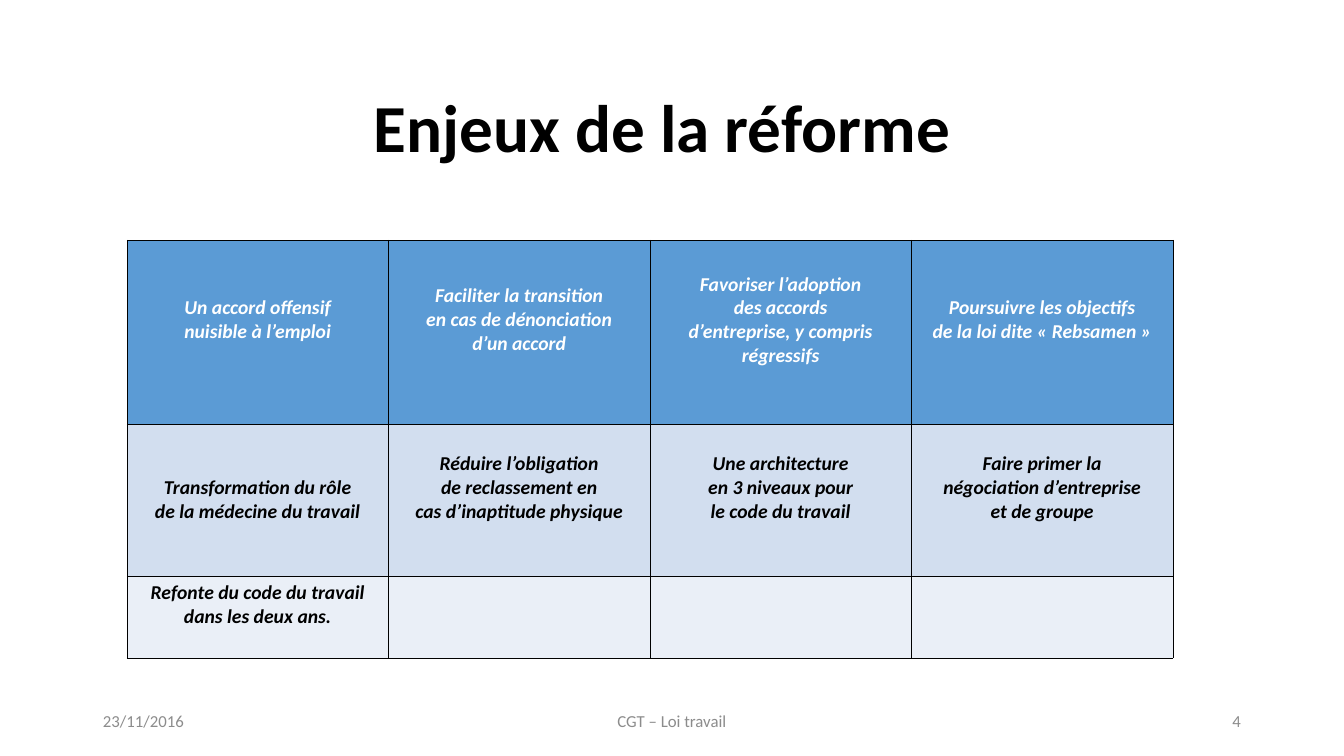
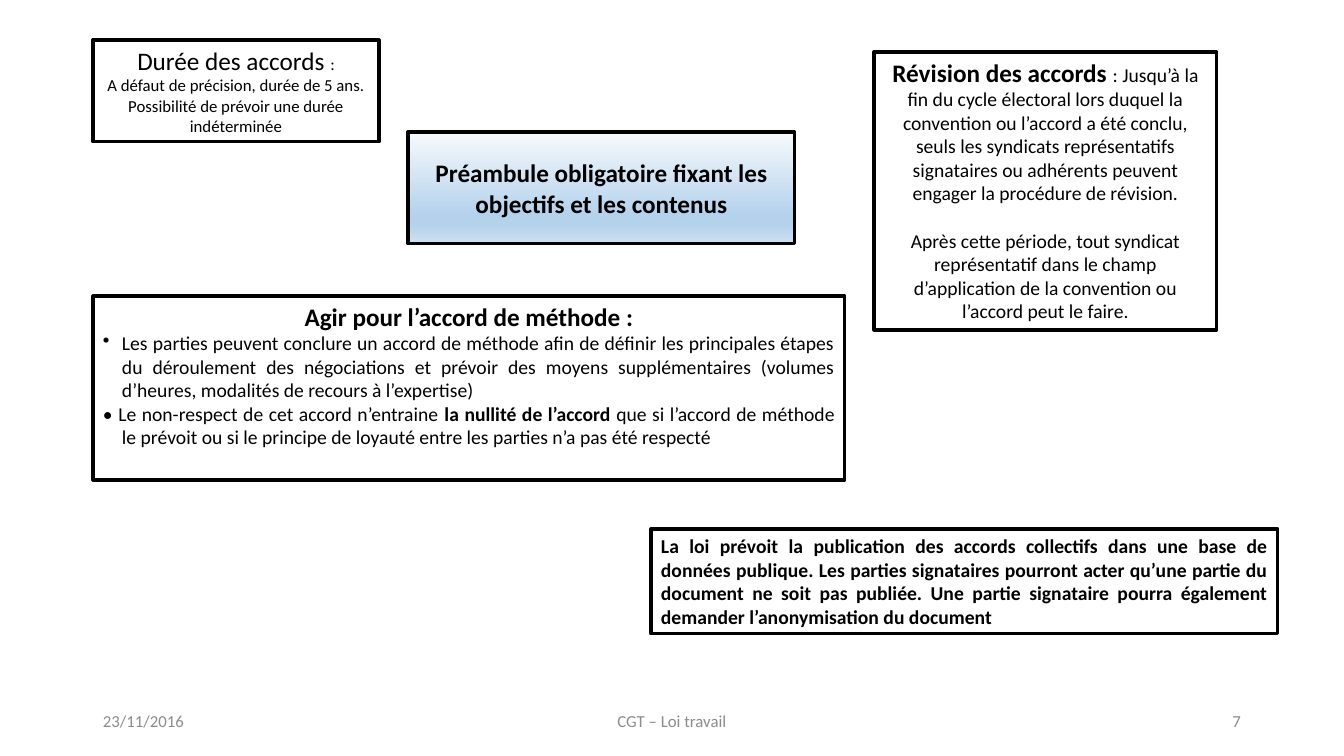
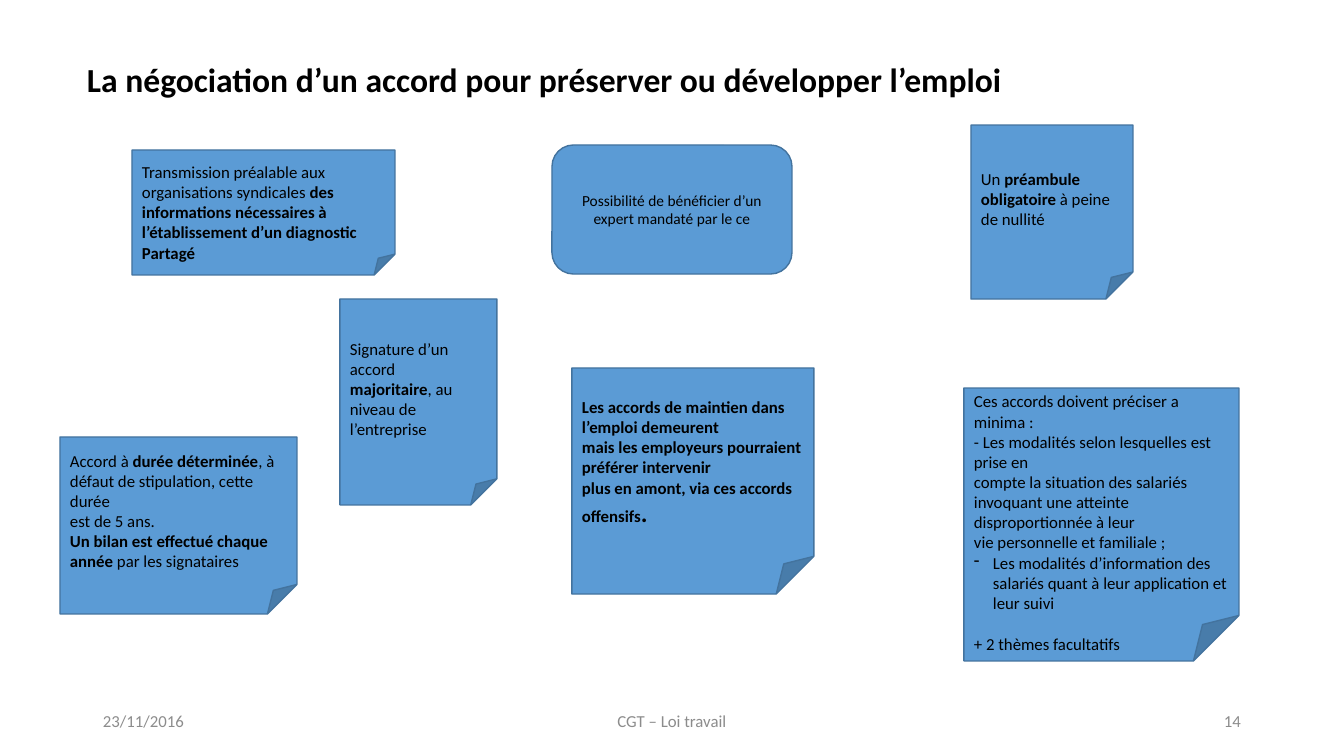
from lxml.etree import SubElement as Sub
from pptx import Presentation
from pptx.dml.color import RGBColor
from pptx.enum.shapes import MSO_SHAPE as Kind
from pptx.enum.text import MSO_ANCHOR as Anchor, PP_ALIGN as Align
from pptx.oxml.ns import qn
from pptx.util import Emu, Pt

SCALE = 12192000 / 1344
FONT, BIG = "Calibri", 18
BLACK, WHITE, GREY = "000000", "FFFFFF", "8C8C8C"
BLUE, EDGE = "5B9BD5", "43739E"
LEFT, MID, RIGHT, FULL = Align.LEFT, Align.CENTER, Align.RIGHT, Align.JUSTIFY
DATE, FOOT = "23/11/2016", "CGT – Loi travail"
GRAD = [(0, "F7FAFD"), (74, "B5D2EC"), (83, "B5D2EC"), (100, "CEE1F2")]

# Markup: *bold*, _large_
ROWS = [
    (184, BLUE, WHITE, [
        ["Un accord offensif", "nuisible à l’emploi"],
        ["Faciliter la transition", "en cas de dénonciation", "d’un accord"],
        ["Favoriser l’adoption", "des accords",
         "d’entreprise, y compris régressifs"],
        ["Poursuivre les objectifs", "de la loi dite « Rebsamen »"]]),
    (152, "D2DEEF", BLACK, [
        ["Transformation du rôle", "de la médecine du travail"],
        ["Réduire l’obligation", "de reclassement en",
         "cas d’inaptitude physique"],
        ["Une architecture", "en 3 niveaux pour", "le code du travail"],
        ["Faire primer la", "négociation d’entreprise", "et de groupe"]]),
    (82, "EAEFF7", BLACK, [
        ["Refonte du code du travail dans les deux ans."], [], [], []]),
]
LOW = (1, 0)

BOXES = [
    ((93, 40, 286, 102), Anchor.TOP, None, [
        ("_Durée des accords _:", 12, MID, {}),
        ("A défaut de précision, durée de 5 ans.", 12, MID, {}),
        ("Possibilité de prévoir une durée indéterminée", 12, MID, {})]),
    ((874, 52, 343, 278), Anchor.TOP, None, [
        ("*_Révision des accords _*: Jusqu’à la fin du cycle électoral lors "
         "duquel la convention ou l’accord a été conclu, seuls les syndicats "
         "représentatifs signataires ou adhérents peuvent engager la "
         "procédure de révision.", 14, MID, {}),
        ("Après cette période, tout syndicat représentatif dans le champ "
         "d’application de la convention ou l’accord peut le faire.",
         14, MID, {"gap": 17})]),
    ((408, 132, 387, 112), Anchor.MIDDLE, GRAD, [
        ("*Préambule obligatoire fixant les objectifs et les contenus*",
         BIG, MID, {})]),
    ((651, 529, 627, 105), Anchor.TOP, None, [
        ("*La loi prévoit la publication des accords collectifs dans une base "
         "de données publique. Les parties signataires pourront acter qu’une "
         "partie du document ne soit pas publiée. Une partie signataire "
         "pourra également demander l’anonymisation du document*",
         14, FULL, {})]),
    ((93, 296, 752, 184), Anchor.TOP, None, [
        ("*Agir pour l’accord de méthode :*", BIG, MID, {}),
        ("Les parties peuvent conclure un accord de méthode afin de définir "
         "les principales étapes du déroulement des négociations et prévoir "
         "des moyens supplémentaires (volumes d’heures, modalités de recours "
         "à l’expertise)", 14, FULL, {"hang": 19, "mark": "•"}),
        ("• Le non-respect de cet accord n’entraine *la nullité de l’accord "
         "*que si l’accord de méthode le prévoit ou si le principe de loyauté "
         "entre les parties n’a pas été respecté", 14, FULL, {"hang": 19})]),
]

NOTES = [
    ((132, 150, 263, 125), 25, [
        "Transmission préalable aux", "organisations syndicales *des*",
        "*informations nécessaires à*", "*l’établissement d’un diagnostic*",
        "*Partagé*"]),
    ((340, 299, 157, 206), 5, [
        "Signature d’un accord", "*majoritaire*, au niveau de",
        "l’entreprise"]),
    ((572, 368, 242, 226), 5, [
        "*Les accords de maintien dans l’emploi demeurent*",
        "*mais les employeurs pourraient préférer intervenir*",
        "*plus en amont, via ces accords offensifs_._*"]),
    ((971, 125, 162, 174), 5, [
        "Un *préambule*", "*obligatoire *à peine", "de nullité"]),
    ((60, 437, 237, 177), 5, [
        "Accord à *durée déterminée*, à défaut de stipulation, cette durée",
        "est de 5 ans.",
        "*Un bilan est effectué chaque année *par les signataires"]),
    ((964, 388, 275, 273), 46, [
        "Ces accords doivent préciser a minima :",
        "- Les modalités selon lesquelles est prise en",
        "compte la situation des salariés invoquant une atteinte "
        "disproportionnée à leur",
        "vie personnelle et familiale ;",
        ("Les modalités d’information des salariés quant à leur application "
         "et leur suivi", 12, LEFT, {"hang": 19, "mark": "-"}),
        ("+ 2 thèmes facultatifs", 12, LEFT, {"gap": 14.6})]),
]


def px(n):
    return Emu(round(n * SCALE))


def tint(code):
    return RGBColor.from_string(code)


def style(para, size, color, align):
    para.alignment = align
    font = para.font
    font.name, font.size = FONT, Pt(size)
    font.color.rgb = tint(color)
    return font


def write(frame, paras, color=BLACK, anchor=Anchor.MIDDLE, top=5):
    frame.word_wrap = True
    frame.vertical_anchor = anchor
    frame.margin_left = frame.margin_right = px(10)
    frame.margin_top, frame.margin_bottom = px(top), px(5)
    for n, (text, size, align, opts) in enumerate(paras):
        para = frame.add_paragraph() if n else frame.paragraphs[0]
        font = style(para, size, color, align)
        if "gap" in opts:
            para.space_before = Pt(opts["gap"])
        if "hang" in opts:
            props = para._p.get_or_add_pPr()
            props.set("marL", str(px(opts["hang"])))
            props.set("indent", str(-px(opts["hang"])))
            if "mark" in opts:
                mark = props.makeelement(qn("a:buChar"), {"char": opts["mark"]})
                props.insert_element_before(mark, "a:defRPr")
        whole = text[0] == text[-1] == "*" and text.count("*") == 2
        if whole:
            font.bold = True
            text = text.strip("*")
        bold = False
        for i, part in enumerate(text.split("_")):
            for j, bit in enumerate(part.split("*")):
                bold ^= j > 0
                if bit:
                    run = para.add_run()
                    run.text = bit
                    if bold:
                        run.font.bold = True
                    if i % 2:
                        run.font.size = Pt(BIG)


def label(slide, at, text, size, align, color=BLACK, anchor=Anchor.MIDDLE):
    box = slide.shapes.add_textbox(*map(px, at))
    write(box.text_frame, [(text, size, align, {})], color, anchor)


def panel(slide, kind, at, fill, edge, width):
    box = slide.shapes.add_shape(kind, *map(px, at))
    box.shadow.inherit = False
    box.line.color.rgb, box.line.width = tint(edge), Pt(width)
    if fill is None:
        box.fill.background()
    elif isinstance(fill, str):
        box.fill.solid()
        box.fill.fore_color.rgb = tint(fill)
    else:
        box.fill.gradient()
        box.fill.gradient_angle = 270
        stops = next(box._element.iter(qn("a:gsLst")))
        stops.clear()
        for pos, code in fill:
            stop = Sub(stops, qn("a:gs"), pos=str(pos * 1000))
            Sub(stop, qn("a:srgbClr"), val=code)
    return box.text_frame


def border(cell):
    props = cell._tc.get_or_add_tcPr()
    for side in "LRTB":
        line = Sub(props, qn("a:ln" + side), w=str(Pt(0.25)))
        fill = Sub(line, qn("a:solidFill"))
        Sub(fill, qn("a:srgbClr"), val=BLACK)


def grid(slide):
    high = sum(row[0] for row in ROWS)
    table = slide.shapes.add_table(
        len(ROWS), 4, *map(px, (127, 240, 1046, high))).table
    table.first_row = table.horz_banding = False
    for r, (tall, fill, color, cells) in enumerate(ROWS):
        table.rows[r].height = px(tall)
        for c, lines in enumerate(cells):
            cell = table.cell(r, c)
            border(cell)
            cell.fill.solid()
            cell.fill.fore_color.rgb = tint(fill)
            cell.vertical_anchor = Anchor.MIDDLE
            cell.margin_bottom = px(5 if (r, c) == LOW else 29)
            frame = cell.text_frame
            for n, line in enumerate(lines or [""]):
                para = frame.add_paragraph() if n else frame.paragraphs[0]
                para.text = line
                font = style(para, 14, color, MID)
                font.bold = font.italic = True


def page(deck, number):
    slide = deck.slides.add_slide(deck.slide_layouts[6])
    for left, wide, text, align in [
            (93, 302, DATE, LEFT), (445, 454, FOOT, MID),
            (949, 302, str(number), RIGHT)]:
        label(slide, (left, 701, wide, 40), text, 12, align, GREY)
    return slide


def main():
    deck = Presentation()
    deck.slide_width, deck.slide_height = px(1344), px(756)

    slide = page(deck, 4)
    grid(slide)
    label(slide, (105, 80, 1114, 92), "*Enjeux de la réforme*", 48, MID,
          anchor=Anchor.TOP)

    slide = page(deck, 7)
    for at, anchor, fill, paras in BOXES:
        frame = panel(slide, Kind.RECTANGLE, at, fill, BLACK, 2.25)
        write(frame, paras, anchor=anchor)

    slide = page(deck, 14)
    label(slide, (77, 54, 1156, 50),
          "*La négociation d’un accord pour préserver ou développer l’emploi*",
          24, LEFT, anchor=Anchor.TOP)
    frame = panel(slide, Kind.ROUNDED_RECTANGLE, (552, 145, 240, 129),
                  BLUE, EDGE, 1)
    write(frame, [("Possibilité de bénéficier d’un expert mandaté par le ce",
                   11, MID, {})])
    for at, top, lines in NOTES:
        frame = panel(slide, Kind.FOLDED_CORNER, at, BLUE, EDGE, 1)
        write(frame, [(x, 12, LEFT, {}) if isinstance(x, str) else x
                      for x in lines], top=top)

    deck.save("out.pptx")


if __name__ == "__main__":
    main()
